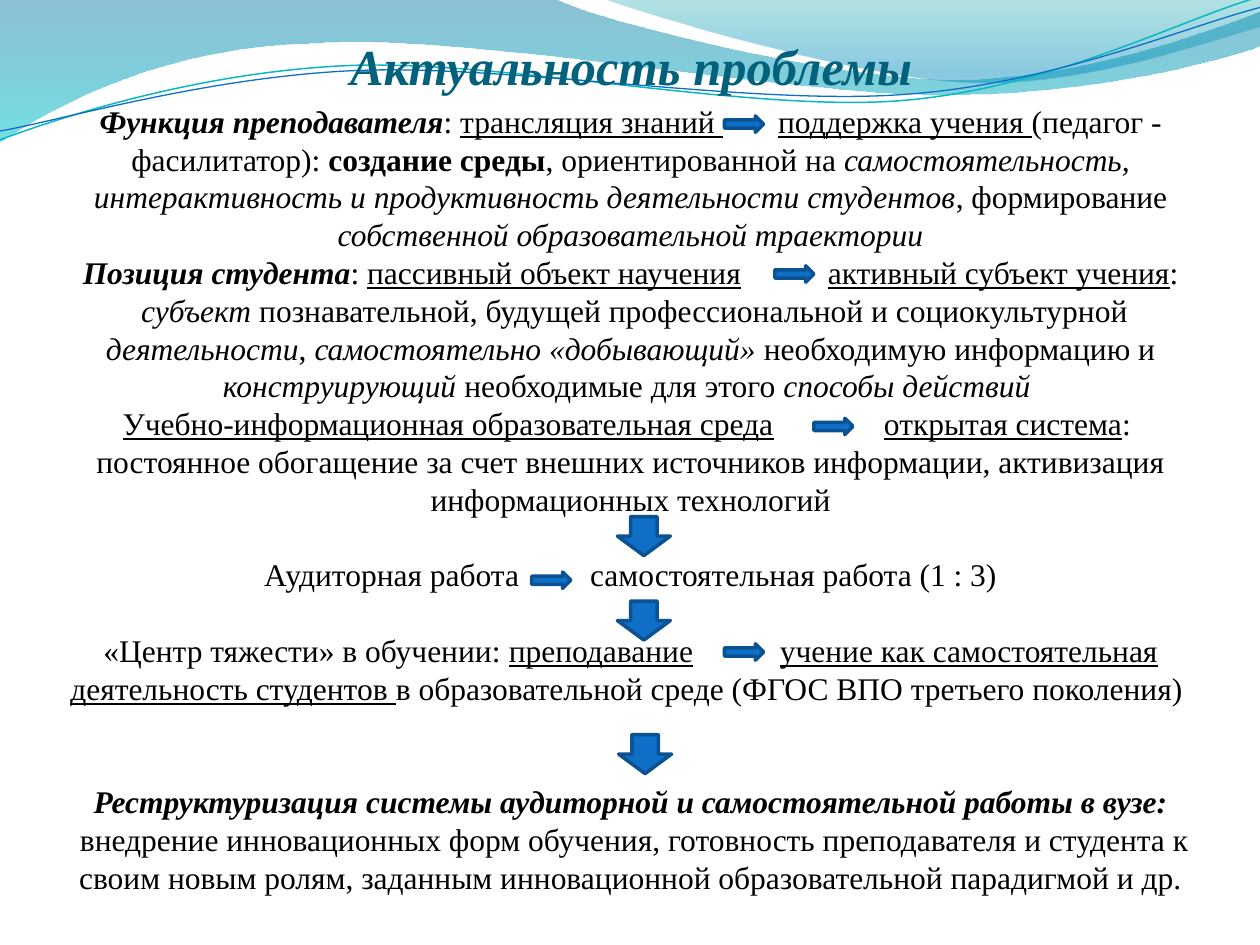
from math import cos, radians, sin

from pptx import Presentation
from pptx.dml.color import RGBColor
from pptx.enum.shapes import MSO_SHAPE
from pptx.enum.text import MSO_ANCHOR, PP_ALIGN
from pptx.oxml.ns import qn
from pptx.util import Inches, Pt

RIGHT, DOWN = MSO_SHAPE.RIGHT_ARROW, MSO_SHAPE.DOWN_ARROW
TOP, BOTTOM = MSO_ANCHOR.TOP, MSO_ANCHOR.BOTTOM
CENTER = PP_ALIGN.CENTER
COLS, ROWS = 10, 7.5
TILT = 357.3

WAVE_LEFT = [(0, 0), (4.4, -0.01),
             (4.76, 0.17, 6.64, 0.63, 7.58, 0.63), (8.53, 0.63, 9.58, 0.26, 10, 0.09),
             (10.01, 0.36),
             (9.83, 0.44, 8.7, 0.76, 7.46, 0.75), (6.22, 0.75, 3.82, 0.28, 2.57, 0.34),
             (1.29, 0.36, 0.46, 0.83, -0.01, 1.13)]
WAVE_RIGHT = [(4.79, -0.01), (5.09, 0.11, 6.82, 0.62, 7.69, 0.65),
              (8.56, 0.69, 9.61, 0.32, 10, 0.21), (10, 0)]
TEAL_LINE = [(0, 1.11), (0.48, 0.93, 1.58, 0.57, 2.77, 0.52),
             (3.95, 0.47, 5.93, 0.89, 7.13, 0.8), (8.33, 0.71, 9.38, 0.15, 9.98, -0.02)]
BLUE_LINE = [(0, 1.04), (0.47, 0.96, 1.64, 0.61, 2.83, 0.56),
             (4.03, 0.51, 5.97, 0.84, 7.17, 0.75), (8.36, 0.67, 9.41, 0.21, 10, 0.06)]

BODY = [
    (0, [("Функция преподавателя", "bi"), (": ", ""), ("трансляция знаний ", "u"), (7, ""),
         ("поддержка учения ", "u"), ("(педагог - фасилитатор): ", ""),
         ("создание среды", "b"), (", ориентированной на ", ""),
         ("самостоятельность, интерактивность и продуктивность деятельности студентов", "i"),
         (", формирование ", ""), ("собственной образовательной траектории", "i")]),
    (0, [("Позиция студента", "bi"), (": ", ""), ("пассивный объект научения", "u"), (11, ""),
         ("активный субъект учения", "u"), (":", "")]),
    (0, [(" субъект ", "i"),
         ("познавательной, будущей профессиональной и социокультурной ", ""),
         ("деятельности", "i"), (", ", ""), ("самостоятельно «добывающий» ", "i"),
         ("необходимую информацию и ", ""), ("конструирующий ", "i"),
         ("необходимые для этого ", ""), ("способы действий ", "i")]),
    (0, [("Учебно-информационная образовательная среда", "u"), (14, ""),
         ("открытая система", "u"), (": ", "")]),
    (0, [("постоянное обогащение за счет внешних источников информации, "
          "активизация информационных технологий", "")]),
    (1, [("Аудиторная работа", ""), (9, ""), ("самостоятельная работа (1 : 3)", "")]),
    (1, [("«Центр тяжести» в обучении: ", ""), ("преподавание", "u"), (11, ""),
         ("учение как самостоятельная деятельность студентов ", "u"),
         ("в образовательной среде (ФГОС ВПО третьего поколения) ", "")]),
    (2, [("Реструктуризация системы аудиторной и самостоятельной работы в вузе:", "bi")]),
    (0, [(" внедрение инновационных форм обучения, готовность преподавателя и студента "
          "к своим новым ролям, заданным инновационной образовательной парадигмой и др.", "")]),
]
ARROWS = [(RIGHT, 0.31, 0.13, [(5.75, 0.92), (6.15, 2.11), (6.46, 3.32), (5.75, 5.11),
                               (4.22, 4.54)]),
          (DOWN, 0.42, 0.31, [(4.9, 4.1), (4.9, 4.77), (4.91, 5.83)])]


def rgb(value):
    """Turn a hex string into a colour."""
    return RGBColor.from_string(value)


def pairs(seg):
    """Split a segment into its points."""
    return list(zip(seg[::2], seg[1::2]))


def turn(segments, angle, cx, cy):
    """Rotate segments clockwise about a centre."""
    c, s = cos(radians(angle)), sin(radians(angle))
    return [[v for px, py in pairs(seg)
             for v in (cx + (px - cx) * c - (py - cy) * s, cy + (px - cx) * s + (py - cy) * c)]
            for seg in segments]


class Deck:
    """Hold the style and the current slide."""

    font, size, leading = "Times New Roman", 18, 21.6
    ink, title_ink, arrow_fill, arrow_line = "000000", "04617B", "0F6FC6", "0B5292"

    def __init__(self):
        """Open a presentation with one blank slide."""
        self.prs = Presentation()
        self.prs.slide_width, self.prs.slide_height = Inches(COLS), Inches(ROWS)
        self.s = self.prs.slides.add_slide(self.prs.slide_layouts[6])

    def x(self, cols):
        """Convert columns to a length."""
        return round(self.prs.slide_width * cols / COLS)

    def y(self, rows):
        """Convert rows to a length."""
        return round(self.prs.slide_height * rows / ROWS)

    def box(self, left, top, width, height):
        """Convert a grid box to lengths."""
        return self.x(left), self.y(top), self.x(width), self.y(height)

    def outline(self, segments, close):
        """Draw a freeform whose three-point segments are Bezier curves."""
        points = [(self.x(px), self.y(py)) for seg in segments for px, py in pairs(seg)]
        fb = self.s.shapes.build_freeform(*points[0])
        fb.add_line_segments(points[1:], close=close)
        sp = fb.convert_to_shape()
        sp.shadow.inherit = False
        lines = iter(list(sp._element.spPr.iter(qn("a:lnTo"))))
        for seg in segments[1:]:
            first = next(lines)
            if len(seg) == 6:
                bezier = first.makeelement(qn("a:cubicBezTo"), {})
                first.addprevious(bezier)
                for line in (first, next(lines), next(lines)):
                    bezier.append(line[0])
                    line.getparent().remove(line)
        return sp

    def wave(self, segments, *stops):
        """Draw a wave with a translucent downward gradient."""
        sp = self.outline(segments, True)
        sp.line.fill.background()
        sp.fill.gradient()
        sp.fill.gradient_angle = 270
        for stop, (position, color, _) in zip(sp.fill.gradient_stops, stops):
            stop.position, stop.color.rgb = position, rgb(color)
        nodes = list(sp._element.spPr.iter(qn("a:srgbClr")))
        for node, (_, _, alpha) in zip(nodes, stops):
            node.append(node.makeelement(qn("a:alpha"), {"val": str(alpha * 1000)}))

    def curve(self, segments, color, width, cx, cy):
        """Draw an open curved line in a tilted frame."""
        sp = self.outline(turn(segments, -TILT, cx, cy), False)
        sp.rotation = TILT
        sp.fill.background()
        sp.line.color.rgb, sp.line.width = rgb(color), Pt(width)

    def frame(self, box, anchor):
        """Add a wrapping text box."""
        tf = self.s.shapes.add_textbox(*self.box(*box)).text_frame
        tf.word_wrap, tf.vertical_anchor = True, anchor
        return tf

    def style(self, r, size, color, letters):
        """Format a run; letters b, i and u switch styles on."""
        r.font.name, r.font.size, r.font.color.rgb = self.font, Pt(size), rgb(color)
        r.font.bold, r.font.italic, r.font.underline = (k in letters for k in "biu")

    def title(self, text, box):
        """Add the slide title."""
        tf = self.frame(box, BOTTOM)
        tf.margin_left = tf.margin_right = tf.margin_bottom = 0
        tf.text = text
        p = tf.paragraphs[0]
        p.alignment = CENTER
        self.style(p.runs[0], 28.8, self.title_ink, "bi")

    def body(self, paragraphs, box):
        """Add (lines before, runs) paragraphs; a number as text is a gap in spaces."""
        tf = self.frame(box, TOP)
        for n, (before, runs) in enumerate(paragraphs):
            p = tf.add_paragraph() if n else tf.paragraphs[0]
            p.alignment, p.line_spacing = CENTER, Pt(self.leading)
            p.space_before = Pt(before * self.leading)
            for text, letters in runs:
                r = p.add_run()
                gap = isinstance(text, int)
                r.text = " " if gap else text
                self.style(r, self.size, self.ink, letters)
                if gap:
                    r.font._element.set("spc", str((text - 1) * self.size * 25))

    def arrow(self, kind, *box):
        """Draw a block arrow."""
        sp = self.s.shapes.add_shape(kind, *self.box(*box))
        sp.shadow.inherit = False
        sp.fill.solid()
        sp.fill.fore_color.rgb = rgb(self.arrow_fill)
        sp.line.color.rgb, sp.line.width = rgb(self.arrow_line), Pt(2)


def main():
    """Build and save the slide."""
    deck = Deck()
    deck.wave(WAVE_LEFT, (0, "0074A1", 45), (1, "00C6CF", 55))
    deck.wave(WAVE_RIGHT, (0, "00A1A9", 30), (0.8, "008BBF", 45))
    deck.curve(TEAL_LINE, "0AB8BF", 0.85, 4.99, 0.57)
    deck.curve(BLUE_LINE, "0F6FC6", 0.75, 5, 0.59)
    deck.title("Актуальность проблемы", (0.51, 0.29, 9, 0.47))
    deck.body(BODY, (0.28, 0.76, 9.45, 6.46))
    for kind, width, height, places in ARROWS:
        for left, top in places:
            deck.arrow(kind, left, top, width, height)
    deck.prs.save("out.pptx")


if __name__ == "__main__":
    main()
